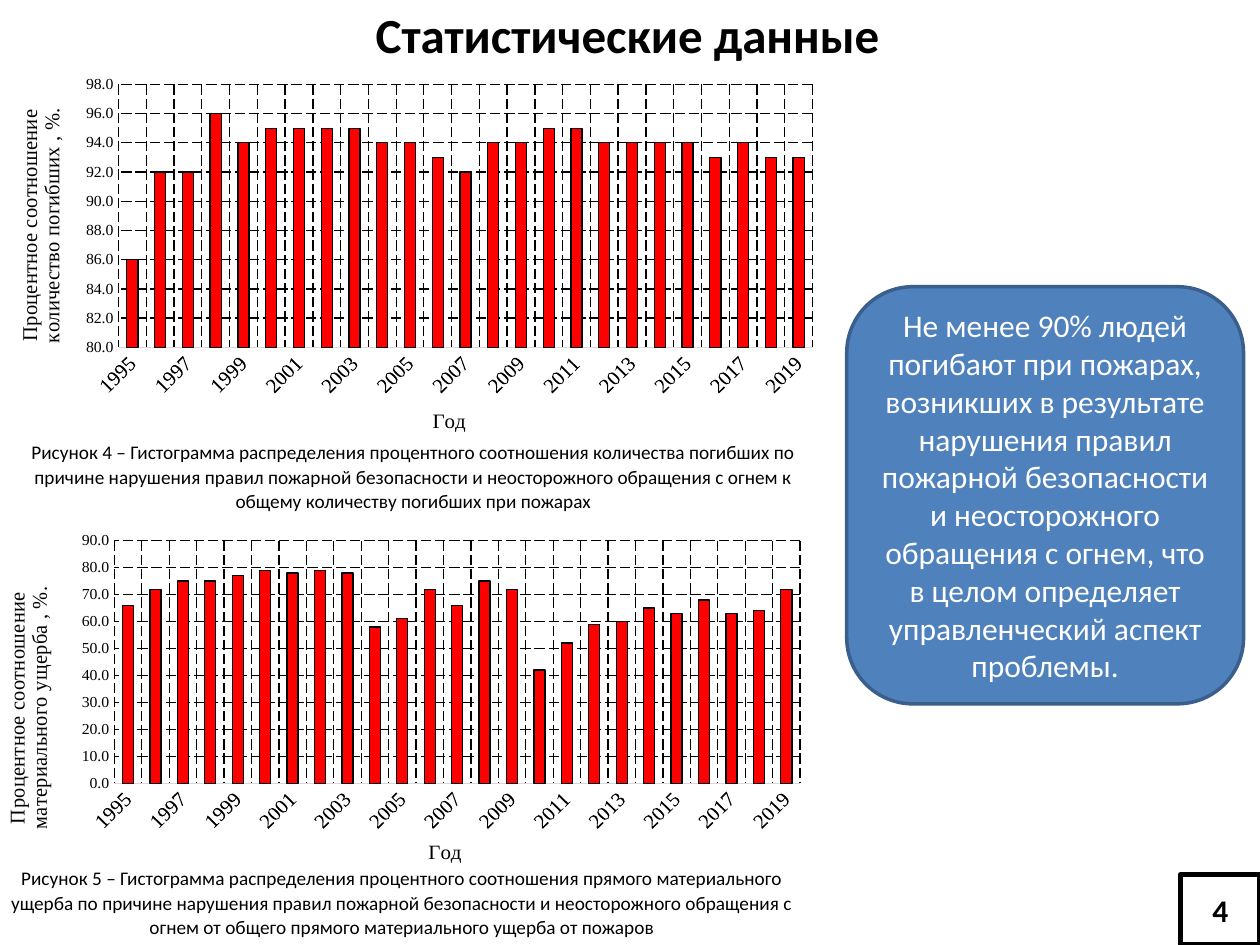
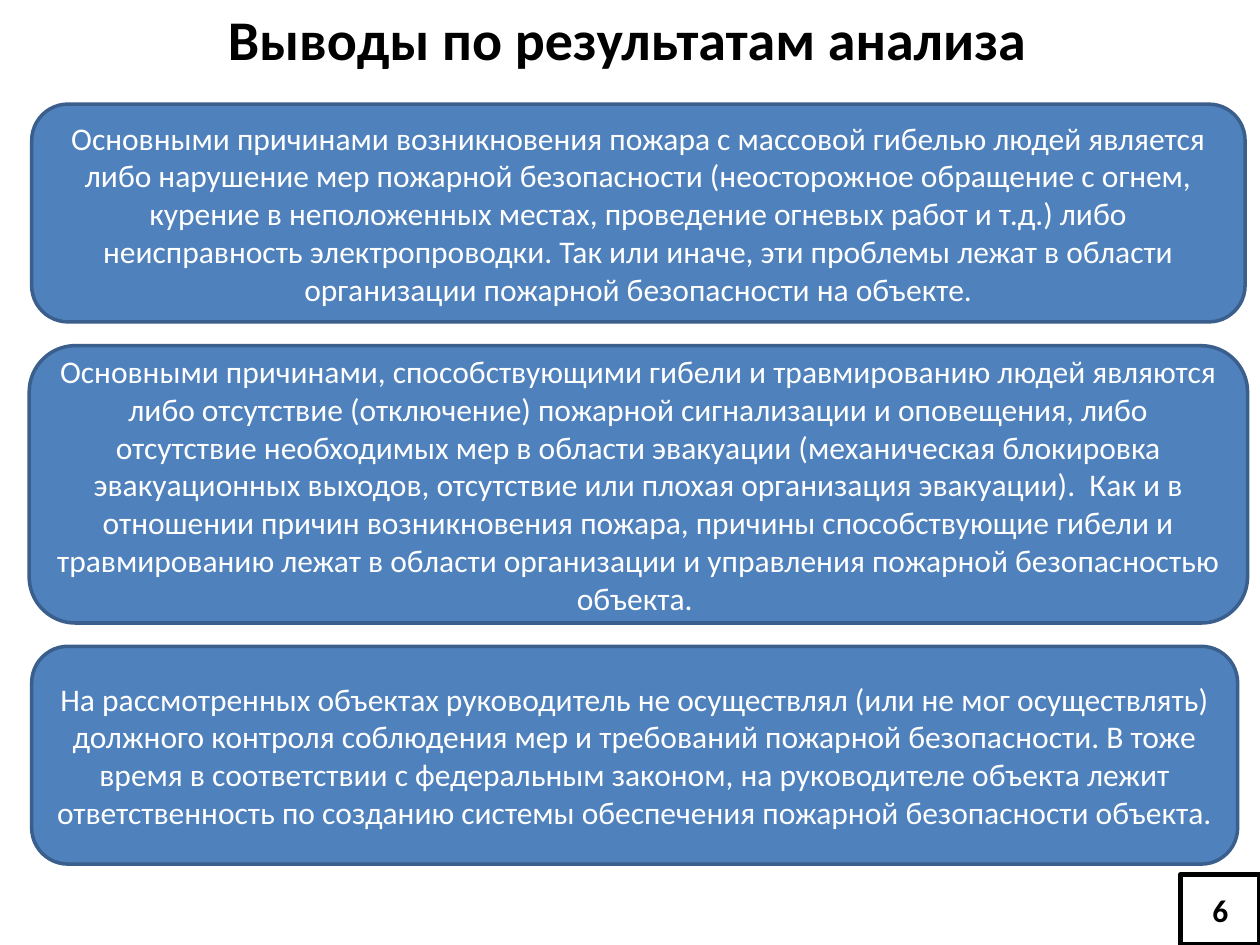
from dataclasses import dataclass

from lxml import etree
from pptx import Presentation
from pptx import util as u
from pptx.chart import data as chart_data
from pptx.dml.color import RGBColor
from pptx.enum import chart as chart_enum
from pptx.enum import dml, shapes, text
from pptx.oxml.ns import qn


@dataclass(frozen=True)
class Theme:
    ink: RGBColor = RGBColor(0, 0, 0)
    paper: RGBColor = RGBColor(255, 255, 255)
    card: RGBColor = RGBColor(0x4F, 0x81, 0xBD)
    card_edge: RGBColor = RGBColor(0x3A, 0x5F, 0x8C)
    bar: RGBColor = RGBColor(255, 0, 0)
    axis: RGBColor = RGBColor(0xD9, 0xD9, 0xD9)
    font: str = "Calibri"
    chart_font: str = "Times New Roman"
    body_size: int = 18
    caption_size: int = 11
    chart_size: int = 10
    axis_size: int = 12
    scale_size: int = 9
    hairline: float = 0.75


THEME = Theme()
YEARS = [str(year) for year in range(1995, 2020)]
DEATHS = [86, 92, 92, 96, 94, 95, 95, 95, 95, 94, 94, 93, 92,
          94, 94, 95, 95, 94, 94, 94, 94, 93, 94, 93, 93]
DAMAGE = [66, 72, 75, 75, 77, 79, 78, 79, 78, 58, 61, 72, 66,
          75, 72, 42, 52, 59, 60, 65, 63, 68, 63, 64, 72]
CONCLUSIONS = [
    ((0.64, 2.1, 24.46, 4.39),
     "Основными причинами возникновения пожара с массовой гибелью людей является либо "
     "нарушение мер пожарной безопасности (неосторожное обращение с огнем, курение в "
     "неположенных местах, проведение огневых работ и т.д.) либо неисправность "
     "электропроводки. Так или иначе, эти проблемы лежат в области организации пожарной "
     "безопасности на объекте."),
    ((0.59, 6.97, 24.56, 5.59),
     "Основными причинами, способствующими гибели и травмированию людей являются либо "
     "отсутствие (отключение) пожарной сигнализации и оповещения, либо отсутствие "
     "необходимых мер в области эвакуации (механическая блокировка эвакуационных выходов, "
     "отсутствие или плохая организация эвакуации).  Как и в отношении причин "
     "возникновения пожара, причины способствующие гибели и травмированию лежат в области "
     "организации и управления пожарной безопасностью объекта. "),
    ((0.64, 13.03, 24.31, 4.39),
     "На рассмотренных объектах руководитель не осуществлял (или не мог осуществлять) "
     "должного контроля соблюдения мер и требований пожарной безопасности. В тоже время в "
     "соответствии с федеральным законом, на руководителе объекта лежит ответственность "
     "по созданию системы обеспечения пожарной безопасности объекта."),
]


def cm(box):
    return [u.Cm(length) for length in box]


def set_font(font, size, color=THEME.ink, name=THEME.font, bold=False):
    font.size, font.name, font.bold = u.Pt(size), name, bold
    font.color.rgb = color


def write(frame, words, size, color=THEME.ink, bold=False):
    frame.word_wrap = True
    paragraph = frame.paragraphs[0]
    paragraph.alignment = text.PP_ALIGN.CENTER
    run = paragraph.add_run()
    run.text = words
    set_font(run.font, size, color, bold=bold)
    return paragraph


def add_text(slide, box, words, size, bold=False):
    frame = slide.shapes.add_textbox(*cm(box)).text_frame
    return write(frame, words, size, bold=bold)


def add_title(slide, words, size, height):
    add_text(slide, (-0.05, -0.03, 25.4, height), words, size, bold=True)


def add_caption(slide, box, words):
    paragraph = add_text(slide, box, words, THEME.caption_size)
    paragraph.line_spacing = 1.06
    paragraph.space_after = u.Pt(8)


def add_box(slide, kind, box, words, edge, edge_width, fill=None, color=THEME.ink, bold=False):
    shape = slide.shapes.add_shape(kind, *cm(box))
    shape.shadow.inherit = False
    if fill is None:
        shape.fill.background()
    else:
        shape.fill.solid()
        shape.fill.fore_color.rgb = fill
    shape.line.color.rgb = edge
    shape.line.width = u.Pt(edge_width)
    shape.text_frame.vertical_anchor = text.MSO_ANCHOR.MIDDLE
    write(shape.text_frame, words, THEME.body_size, color, bold)


def add_card(slide, box, words):
    add_box(slide, shapes.MSO_SHAPE.ROUNDED_RECTANGLE, box, words,
            THEME.card_edge, 2, THEME.card, THEME.paper)


def add_page_number(slide, number):
    add_box(slide, shapes.MSO_SHAPE.RECTANGLE, (23.8, 17.63, 1.6, 1.42), str(number),
            THEME.ink, 3, bold=True)


def place(parent, index, **settings):
    for stale in parent.findall(qn("c:layout")):
        parent.remove(stale)
    layout = etree.Element(qn("c:layout"))
    manual = etree.SubElement(layout, qn("c:manualLayout"))
    for tag, value in settings.items():
        etree.SubElement(manual, qn(f"c:{tag}")).set("val", str(value))
    parent.insert(index, layout)


def style_line(line, color, dash=None):
    line.color.rgb = color
    line.width = u.Pt(THEME.hairline)
    if dash:
        line.dash_style = dash


def turn(body, degrees):
    body.set("rot", str(degrees * 60000))
    body.set("vert", "horz")


def style_axis(axis, title, title_at, label_size, title_turn):
    frame = axis.axis_title.text_frame
    run = frame.paragraphs[0].add_run()
    run.text = title
    set_font(run.font, THEME.axis_size, name=THEME.chart_font)
    turn(frame._txBody.find(qn("a:bodyPr")), title_turn)
    x, y = title_at
    place(axis.axis_title._element, 1, xMode="edge", yMode="edge", x=x, y=y)
    axis.major_tick_mark = axis.minor_tick_mark = chart_enum.XL_TICK_MARK.NONE
    axis.has_major_gridlines = True
    style_line(axis.major_gridlines.format.line, THEME.ink, dml.MSO_LINE.LONG_DASH)
    set_font(axis.tick_labels.font, label_size, name=THEME.chart_font)


def add_histogram(slide, box, values, scale, value_title, value_at, year_at, plot_area):
    table = chart_data.CategoryChartData(number_format="0.0")
    table.categories = YEARS
    table.add_series("Series 1", values)
    chart = slide.shapes.add_chart(
        chart_enum.XL_CHART_TYPE.COLUMN_CLUSTERED, *cm(box), table).chart
    chart.has_legend = chart.has_title = False
    set_font(chart.font, THEME.chart_size)

    plot = chart.plots[0]
    plot.gap_width = 150
    plot.vary_by_categories = False
    bars = plot.series[0].format
    bars.fill.solid()
    bars.fill.fore_color.rgb = THEME.bar
    style_line(bars.line, THEME.ink)

    years, percent = chart.category_axis, chart.value_axis
    style_axis(years, "Год", year_at, THEME.axis_size, 0)
    style_line(years.format.line, THEME.axis)
    turn(years._element.find(qn("c:txPr")).find(qn("a:bodyPr")), -45)

    style_axis(percent, value_title, value_at, THEME.scale_size, -90)
    percent.format.line.fill.background()
    percent.minimum_scale, percent.maximum_scale, percent.major_unit = scale
    percent.tick_labels.number_format = "0.0"
    percent.tick_labels.number_format_is_linked = False

    x, y, w, h = plot_area
    place(chart._chartSpace.find(".//" + qn("c:plotArea")), 0, layoutTarget="inner",
          xMode="edge", yMode="edge", x=x, y=y, w=w, h=h)


def build_statistics(slide):
    add_title(slide, "Статистические данные", 28, 1.45)
    add_card(slide, (17.07, 5.78, 8, 8.41),
             "Не менее 90% людей погибают при пожарах, возникших в результате нарушения "
             "правил пожарной безопасности и неосторожного обращения с огнем, что в целом "
             "определяет управленческий аспект проблемы.")
    add_page_number(slide, 4)
    add_histogram(slide, (0.25, 1.52, 16.46, 7.32), DEATHS, (80, 98, 2),
                  "Процентное соотношение количество погибших , %.",
                  (0, 0.09), (0.51, 0.92), (0.13, 0.02, 0.85, 0.74))
    add_caption(slide, (0.32, 8.73, 16.03, 1.73),
                "Рисунок 4 – Гистограмма распределения процентного соотношения количества "
                "погибших по причине нарушения правил пожарной безопасности и неосторожного "
                "обращения с огнем к общему количеству погибших при пожарах")
    add_histogram(slide, (0, 10.72, 16.46, 6.81), DAMAGE, (0, 90, 10),
                  "Процентное соотношение материального ущерба , %.",
                  (0, 0.17), (0.52, 0.92), (0.14, 0.02, 0.84, 0.74))
    add_caption(slide, (-0.1, 17.32, 16.41, 1.73),
                "Рисунок 5 – Гистограмма распределения процентного соотношения прямого "
                "материального ущерба по причине нарушения правил пожарной безопасности и "
                "неосторожного обращения с огнем от общего прямого материального ущерба "
                "от пожаров")


def build_conclusions(slide):
    add_title(slide, "Выводы по результатам анализа", 32, 1.63)
    for box, words in CONCLUSIONS:
        add_card(slide, box, words)
    add_page_number(slide, 6)


def main():
    deck = Presentation()
    deck.slide_width, deck.slide_height = u.Cm(25.4), u.Cm(19.05)
    for build in (build_statistics, build_conclusions):
        build(deck.slides.add_slide(deck.slide_layouts[6]))
    deck.save("out.pptx")


if __name__ == "__main__":
    main()
